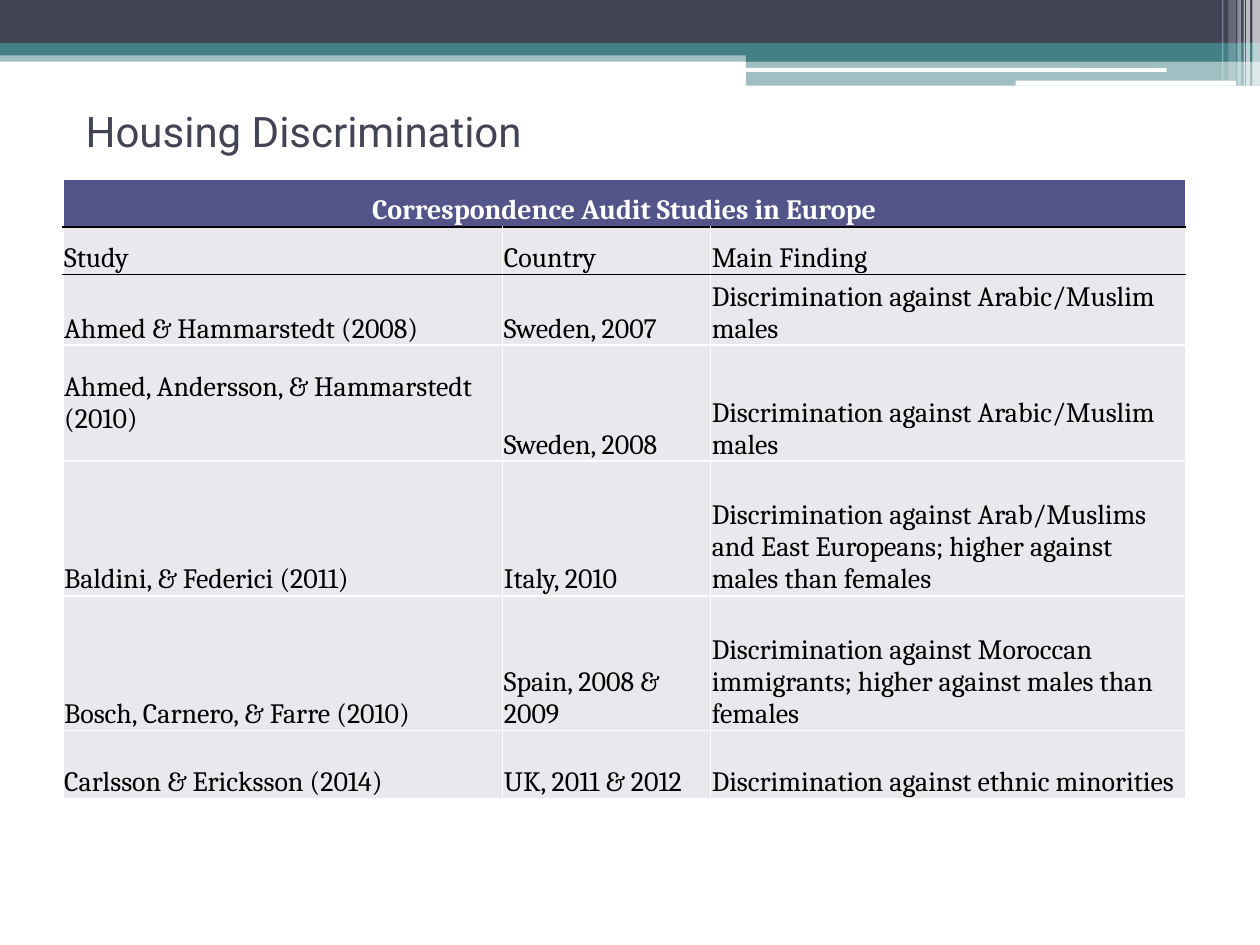
from dataclasses import dataclass

from lxml.etree import SubElement
from pptx import Presentation
from pptx.dml.color import RGBColor as Color
from pptx.enum.shapes import MSO_SHAPE as Shape
from pptx.enum.text import MSO_ANCHOR as Anchor, PP_ALIGN as Align
from pptx.oxml.ns import qn
from pptx.util import Inches, Pt


@dataclass(frozen=True)
class Theme:
    navy: str = "424456"
    teal: str = "438086"
    white: str = "FFFFFF"
    black: str = "000000"
    header: str = "53548A"
    body: str = "E9E9ED"
    title_font: str = "Roboto"
    table_font: str = "Cambria"
    title_size: int = 24
    table_size: int = 16


class SlideBuilder:
    def __init__(self, slide, theme):
        self.slide = slide
        self.theme = theme

    def apply(self, target, formats):
        for name, value in formats.items():
            setattr(target, name, value)

    def style_font(self, paragraph, name, size, color, bold=False):
        self.apply(paragraph.font, {"name": name, "size": Pt(size), "bold": bold})
        paragraph.font.color.rgb = Color.from_string(color)

    def bar(self, box, color, opacity=100, kind=Shape.RECTANGLE):
        shape = self.slide.shapes.add_shape(kind, *map(Inches, box))
        shape.shadow.inherit = False
        shape.fill.solid()
        shape.fill.fore_color.rgb = Color.from_string(color)
        shape.line.fill.background()
        if opacity < 100:
            tint = shape._element.spPr.find(qn("a:solidFill"))[0]
            SubElement(tint, qn("a:alpha"), val=str(opacity * 1000))

    def title(self, text, box):
        frame = self.slide.shapes.add_textbox(*map(Inches, box)).text_frame
        self.apply(frame, {"word_wrap": True, "vertical_anchor": Anchor.MIDDLE,
                           "margin_left": Inches(0.18)})
        paragraph = frame.paragraphs[0]
        paragraph.text = text
        self.style_font(paragraph, self.theme.title_font, self.theme.title_size,
                        self.theme.navy)

    def border(self, cell, side, color):
        line = SubElement(cell._tc.get_or_add_tcPr(), qn(f"a:ln{side}"), w=str(Pt(1)))
        fill = SubElement(line, qn("a:solidFill"))
        SubElement(fill, qn("a:srgbClr"), val=color)

    def cell(self, cell, text, row, anchor):
        theme = self.theme
        is_header = row == 0
        colors = {"L": theme.white, "R": theme.white,
                  "T": theme.black if row in (1, 2) else theme.white,
                  "B": theme.black if row in (0, 1) else theme.white}
        for side, color in colors.items():
            self.border(cell, side, color)
        cell.fill.solid()
        cell.fill.fore_color.rgb = Color.from_string(theme.header if is_header else theme.body)
        edge = Inches(0.01)
        self.apply(cell, {"margin_left": edge, "margin_right": edge, "margin_top": edge,
                          "margin_bottom": 0, "vertical_anchor": anchor})
        paragraph = cell.text_frame.paragraphs[0]
        paragraph.text = text
        paragraph.alignment = Align.CENTER if is_header else Align.LEFT
        self.style_font(paragraph, theme.table_font, theme.table_size,
                        theme.white if is_header else theme.black, is_header)

    def table(self, left, top, widths, heights, heading, rows, middle_cells):
        records = [(heading,) + ("",) * (len(widths) - 1), *rows]
        table = self.slide.shapes.add_table(
            len(records), len(widths), Inches(left), Inches(top),
            Inches(sum(widths)), Inches(sum(heights))).table
        for column, width in zip(table.columns, widths):
            column.width = Inches(width)
        for row, height in zip(table.rows, heights):
            row.height = Inches(height)
        for row, record in enumerate(records):
            for column, text in enumerate(record):
                anchor = Anchor.MIDDLE if (row, column) in middle_cells else Anchor.BOTTOM
                self.cell(table.cell(row, column), text, row, anchor)
        table.cell(0, 0).merge(table.cell(0, len(widths) - 1))


def main():
    presentation = Presentation()
    presentation.slide_width = Inches(10)
    presentation.slide_height = Inches(7.5)
    theme = Theme()
    slide = presentation.slides.add_slide(presentation.slide_layouts[6])
    builder = SlideBuilder(slide, theme)

    bands = [
        ((0, 0.4, 10, 0.09), theme.teal, 50),
        ((0, 0, 10, 0.34), theme.navy, 100),
        ((0, 0.34, 10, 0.1), theme.teal, 100),
        ((5.92, 0.39, 4.08, 0.1), theme.teal, 100),
        ((5.92, 0.48, 4.08, 0.2), theme.teal, 50),
    ]
    for box, color, opacity in bands:
        builder.bar(box, color, opacity)
    for box in [(5.91, 0.54, 3.35, 0.03), (8.06, 0.64, 1.75, 0.04)]:
        builder.bar(box, theme.white, kind=Shape.ROUNDED_RECTANGLE)
    stripes = [
        (9.94, 0.06, 0.68, 65), (9.89, 0.03, 0.68, 65), (9.87, 0.01, 0.68, 60),
        (9.82, 0.03, 0.68, 40), (9.75, 0.06, 0.64, 20), (9.7, 0.01, 0.64, 30),
    ]
    for left, width, height, opacity in stripes:
        builder.bar((left, 0, width, height), theme.white, opacity)

    builder.title("Housing Discrimination", (0.5, 0.75, 9, 0.58))

    studies = [
        ("Study", "Country", "Main Finding"),
        ("Ahmed & Hammarstedt (2008)", "Sweden, 2007",
         "Discrimination against Arabic/Muslim males"),
        ("Ahmed, Andersson, & Hammarstedt (2010)", "Sweden, 2008",
         "Discrimination against Arabic/Muslim males"),
        ("Baldini, & Federici (2011)", "Italy, 2010",
         "Discrimination against Arab/Muslims and East Europeans; "
         "higher against males than females"),
        ("Bosch, Carnero, & Farre (2010)", "Spain, 2008 & 2009",
         "Discrimination against Moroccan immigrants; "
         "higher against males than females"),
        ("Carlsson & Ericksson (2014)", "UK, 2011 & 2012",
         "Discrimination against ethnic minorities"),
    ]
    builder.table(0.5, 1.42, (3.49, 1.65, 3.77),
                  (0.38, 0.38, 0.56, 0.92, 1.07, 1.07, 0.54),
                  "Correspondence Audit Studies in Europe", studies, {(3, 0)})
    presentation.save("out.pptx")


if __name__ == "__main__":
    main()
